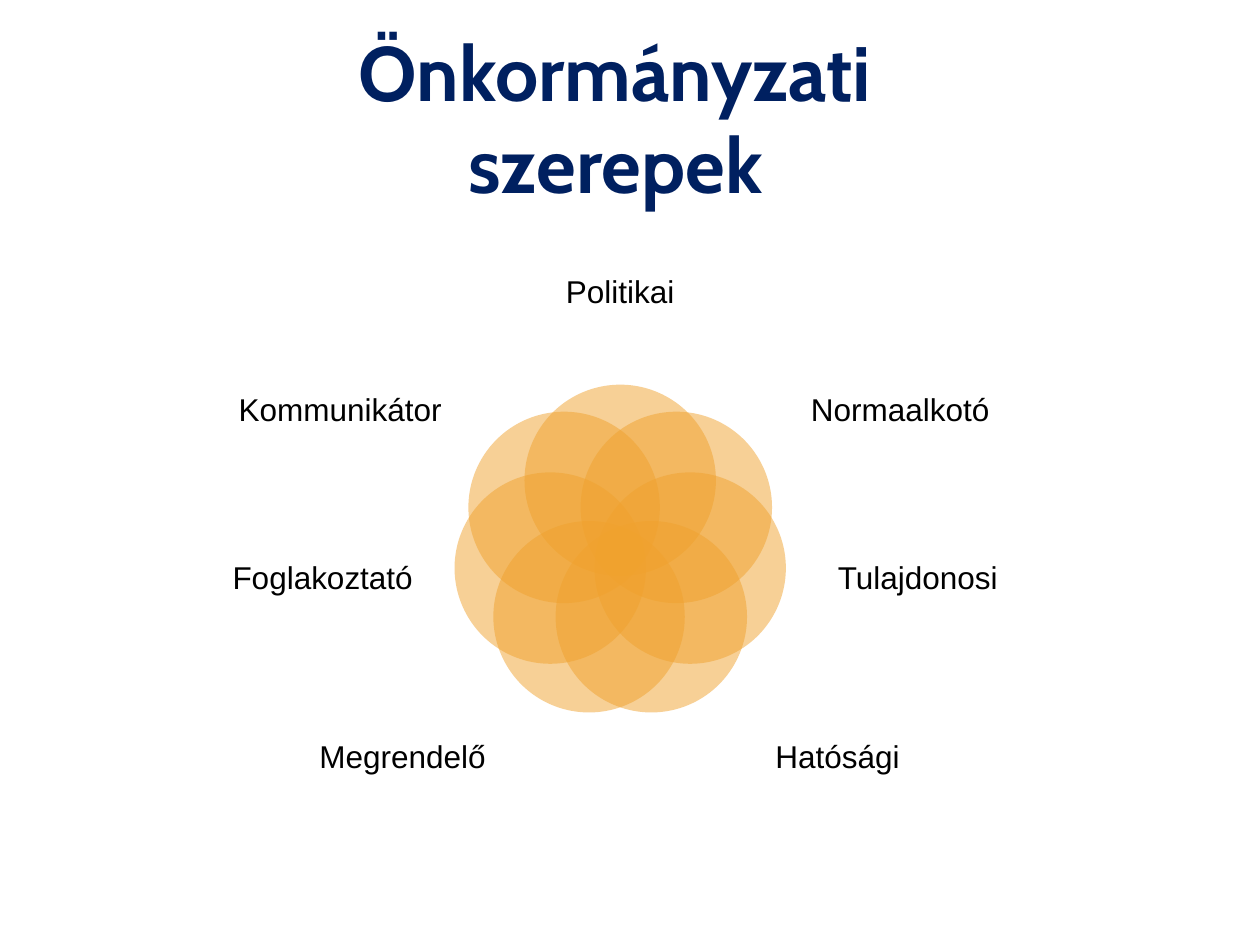
import math
import pptx
import pptx.util
import pptx.dml.color
import pptx.enum.shapes
import pptx.enum.text
import pptx.oxml.ns
import lxml.etree

Pt = pptx.util.Pt
HUES = {"title": "002060", "text": "000000", "petal": "F0A22E"}
MID = (354.4, 315.5)  # centre of the flower
RING = 41             # distance from there to each petal's centre
SIZE = 109.4          # petal diameter

# name, sideways offset from the flower's centre, centre y, width, height
ROLES = [
    ("Politikai", 0, 167.4, 125.3, 67),
    ("Normaalkotó", 160, 235, 118.8, 74.2),
    ("Tulajdonosi", 170, 331.2, 116.6, 79.2),
    ("Hatósági", 124.3, 433.4, 125.3, 72),
    ("Megrendelő", -124.3, 433.4, 125.3, 72),
    ("Foglakoztató", -170, 331.2, 116.6, 79.2),
    ("Kommunikátor", -160, 235, 118.8, 74.2),
]


def shade(key):
    return pptx.dml.color.RGBColor.from_string(HUES[key])


def write(frame, text, font="Arial", size=18, hue="text", bold=False, lead=1.0):
    """Fill a text frame with one centred paragraph."""
    frame.word_wrap = True
    frame.vertical_anchor = pptx.enum.text.MSO_ANCHOR.MIDDLE
    para = frame.paragraphs[0]
    para.alignment = pptx.enum.text.PP_ALIGN.CENTER
    para.line_spacing = lead
    run = para.add_run()
    run.text = text
    run.font.name = font
    run.font.size = Pt(size)
    run.font.bold = bold
    run.font.color.rgb = shade(hue)


class Deck:
    """Holds the style and the current slide."""

    def __init__(self, slide):
        self.slide = slide

    def title(self, text, x, y, w, h):
        box = self.slide.shapes.add_textbox(Pt(x), Pt(y), Pt(w), Pt(h))
        write(box.text_frame, text, font="Cabin", size=44, hue="title", bold=True)

    def petal(self, x, y, alpha=50):
        """Draw a see-through circle centred on x, y."""
        oval = self.slide.shapes.add_shape(
            pptx.enum.shapes.MSO_SHAPE.OVAL,
            Pt(x - SIZE / 2), Pt(y - SIZE / 2), Pt(SIZE), Pt(SIZE))
        oval.shadow.inherit = False
        oval.line.fill.background()
        oval.fill.solid()
        oval.fill.fore_color.rgb = shade("petal")
        qn = pptx.oxml.ns.qn
        clr = oval.fill._xPr.find(qn("a:solidFill")).find(qn("a:srgbClr"))
        lxml.etree.SubElement(clr, qn("a:alpha"), val=str(alpha * 1000))

    def label(self, text, x, y, w, h):
        """Place a label centred on x, y."""
        box = self.slide.shapes.add_textbox(
            Pt(x - w / 2), Pt(y - h / 2), Pt(w), Pt(h))
        frame = box.text_frame
        frame.margin_left = frame.margin_right = 0
        frame.margin_top = frame.margin_bottom = 0
        write(frame, text, lead=0.9)


def main():
    show = pptx.Presentation()
    show.slide_width, show.slide_height = Pt(720), Pt(540)
    deck = Deck(show.slides.add_slide(show.slide_layouts[6]))
    deck.title("Önkormányzati szerepek", 190, 21.6, 323.3, 90)
    for i, (name, shift, y, w, h) in enumerate(ROLES):
        turn = 2 * math.pi * i / len(ROLES)
        deck.petal(MID[0] + RING * math.sin(turn), MID[1] - RING * math.cos(turn))
        deck.label(name, MID[0] + shift, y, w, h)
    show.save("out.pptx")


if __name__ == "__main__":
    main()
